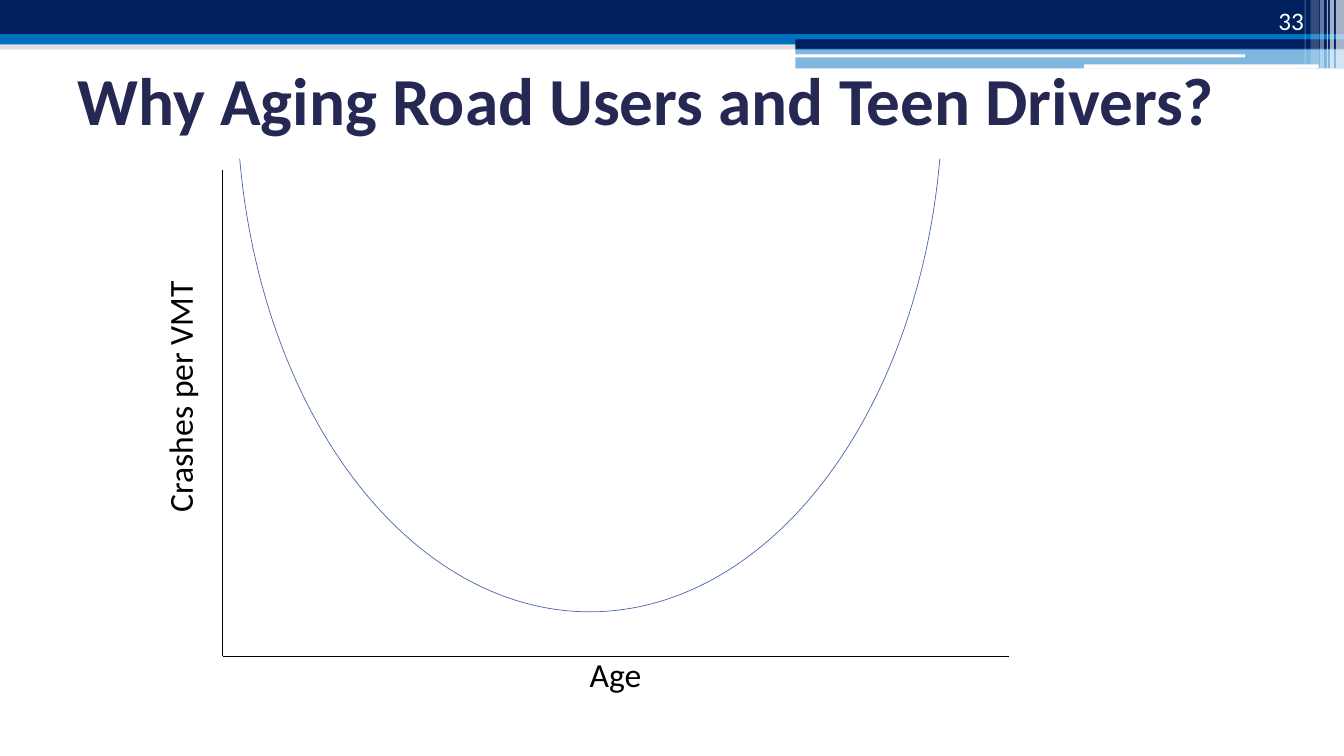
from lxml import etree
from pptx import Presentation
from pptx import util as u
from pptx.dml.color import RGBColor
from pptx.enum import shapes, text
from pptx.oxml import ns

COLORS = {
    "navy": "002060", "blue": "0070C0", "grey": "C4BCC6", "white": "FFFFFF",
    "title": "242852", "curve": "4A66AC", "black": "000000",
}
FONT = "Calibri"


def rgb(name):
    return RGBColor.from_string(COLORS[name])


def write(tf, content, size=24, color="black", bold=False,
          align=text.PP_ALIGN.LEFT, anchor=text.MSO_ANCHOR.TOP, wrap=True):
    tf.word_wrap = wrap
    tf.vertical_anchor = anchor
    p = tf.paragraphs[0]
    p.alignment = align
    r = p.add_run()
    r.text = content
    r.font.name, r.font.size, r.font.bold = FONT, u.Pt(size), bold
    r.font.color.rgb = rgb(color)


class SlideBuilder:
    def __init__(self, slide, line_width=0.5):
        self.s = slide
        self.line_width = u.Pt(line_width)

    def bar(self, x, y, w, h, color, alpha=100, rounded=False):
        kind = shapes.MSO_SHAPE.ROUNDED_RECTANGLE if rounded else shapes.MSO_SHAPE.RECTANGLE
        sp = self.s.shapes.add_shape(kind, *map(u.Inches, (x, y, w, h)))
        sp.shadow.inherit = False
        sp.line.fill.background()
        sp.fill.solid()
        sp.fill.fore_color.rgb = rgb(color)
        if alpha < 100:
            clr = sp._element.spPr.find(ns.qn("a:solidFill"))[0]
            etree.SubElement(clr, ns.qn("a:alpha"), val=str(alpha * 1000))

    def arc(self, x, y, w, h, start, end, flips):
        sp = self.s.shapes.add_shape(shapes.MSO_SHAPE.ARC, *map(u.Inches, (x, y, w, h)))
        sp.shadow.inherit = False
        sp.fill.background()
        sp.line.color.rgb = rgb("curve")
        sp.line.width = self.line_width
        sp.adjustments[0], sp.adjustments[1] = start, end
        xfrm = sp._element.spPr.find(ns.qn("a:xfrm"))
        for flip in flips:
            xfrm.set(flip, "1")

    def line(self, x1, y1, x2, y2):
        cx = self.s.shapes.add_connector(
            shapes.MSO_CONNECTOR.STRAIGHT, *map(u.Inches, (x1, y1, x2, y2)))
        cx.line.color.rgb = rgb("black")
        cx.line.width = self.line_width
        etree.SubElement(cx._element.spPr, ns.qn("a:effectLst"))

    def label(self, x, y, w, h, content, rotation=0, **fmt):
        sp = self.s.shapes.add_textbox(*map(u.Inches, (x, y, w, h)))
        sp.rotation = rotation
        write(sp.text_frame, content, **fmt)


def main():
    prs = Presentation()
    prs.slide_width, prs.slide_height = u.Inches(13.33), u.Inches(7.5)
    b = SlideBuilder(prs.slides.add_slide(prs.slide_layouts[6]))

    # Header bands
    b.bar(0, 0.4, 13.33, 0.09, "grey", alpha=50)
    b.bar(0, 0, 13.33, 0.34, "navy")
    b.bar(0, 0.34, 13.33, 0.1, "blue")
    b.bar(7.89, 0.39, 5.44, 0.1, "navy")
    b.bar(7.89, 0.48, 5.44, 0.2, "blue", alpha=50)
    b.bar(7.88, 0.54, 4.47, 0.03, "white", rounded=True)
    b.bar(10.75, 0.64, 2.33, 0.04, "white", rounded=True)

    # Pale stripes at the right edge: left, width, height, opacity
    for x, w, h, alpha in [(13.25, 0.08, 0.68, 65), (13.19, 0.04, 0.68, 65),
                           (13.16, 0.01, 0.68, 60), (13.09, 0.04, 0.68, 40),
                           (13, 0.08, 0.64, 20), (12.94, 0.01, 0.64, 30)]:
        b.bar(x, 0, w, h, "white", alpha=alpha)

    # Title and page number
    b.label(0.67, 0.39, 12, 1.17, "Why Aging Road Users and Teen Drivers?",
            size=48, color="title", bold=True, anchor=text.MSO_ANCHOR.MIDDLE)
    b.label(11.92, 0, 1.11, 0.4, "33", size=18, color="white",
            align=text.PP_ALIGN.RIGHT, anchor=text.MSO_ANCHOR.BOTTOM)

    # U-shaped crash curve: two mirrored arcs
    for flips in (("flipH", "flipV"), ("flipV",)):
        b.arc(2.35, -4.22, 7, 10.29, 162, 209.64, flips)

    # Axes and their labels
    b.line(2.21, 1.69, 2.21, 6.51)
    b.line(10.01, 6.51, 2.21, 6.51)
    b.label(0.52, 3.67, 2.52, 0.5, "Crashes per VMT", rotation=270, wrap=False)
    b.label(5.75, 6.44, 0.72, 0.5, "Age", wrap=False)

    prs.save("out.pptx")


if __name__ == "__main__":
    main()
